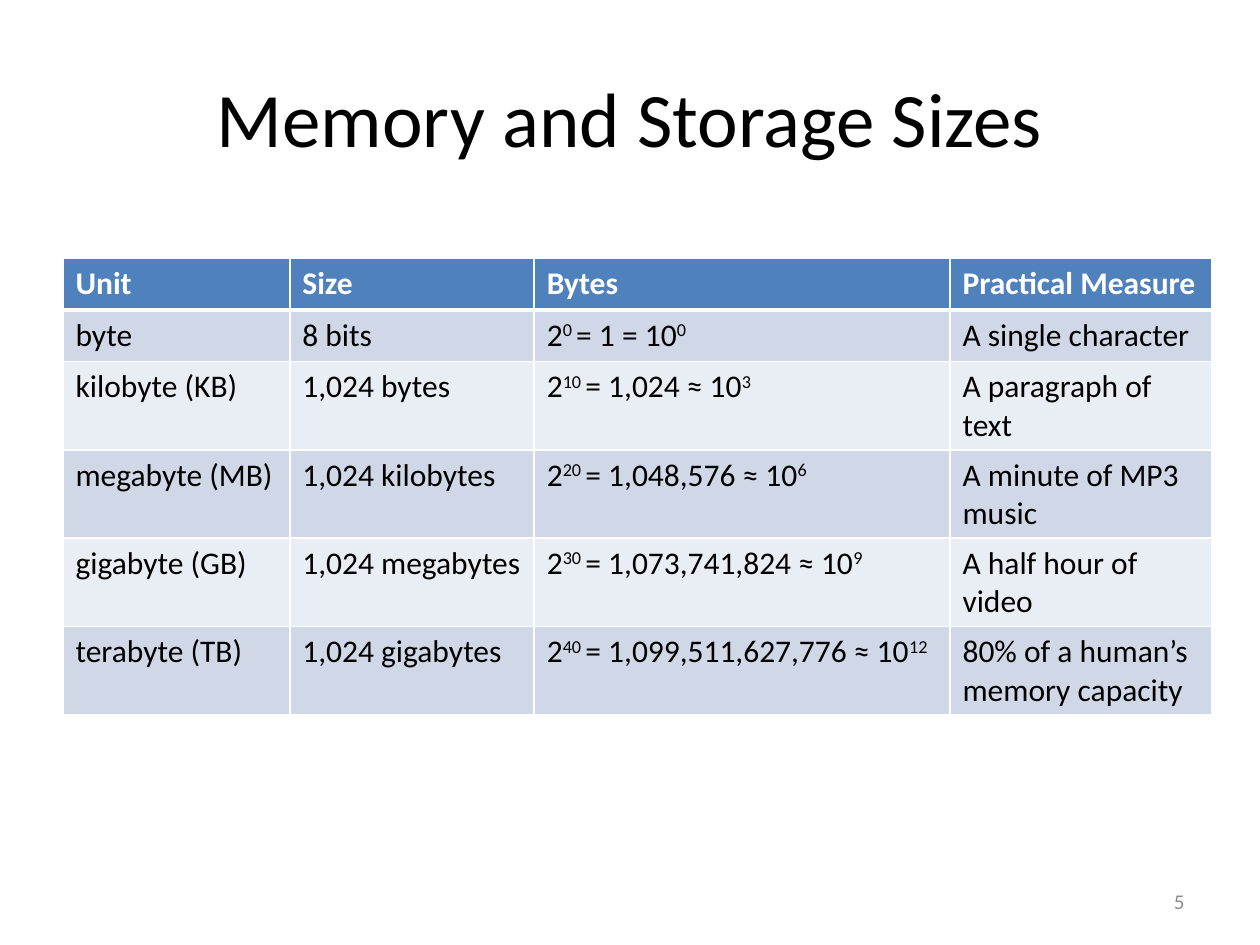
from lxml import etree
from pptx import Presentation
from pptx.dml.color import RGBColor
from pptx.enum.text import MSO_ANCHOR as Anchor, PP_ALIGN as Align
from pptx.oxml.ns import qn
from pptx.util import Inches, Pt

WHITE, BLACK, GRAY = "FFFFFF", "000000", "8C8C8C"
HEADER_FILL, BAND_FILLS = "4F81BD", ("D0D8E8", "E9EDF4")

COLUMN_WIDTHS = (1.8, 1.94, 3.3, 2.08)
ROW_HEIGHT = 0.41
HEADERS = ("Unit", "Size", "Bytes", "Practical Measure")
# Unit, size, power of two, byte count with sign, power of ten, measure
UNITS = (
    ("byte", "8 bits", "0", "1 =", "0", "A single character"),
    ("kilobyte (KB)", "1,024 bytes", "10", "1,024 ≈", "3", "A paragraph of text"),
    ("megabyte (MB)", "1,024 kilobytes", "20", "1,048,576 ≈", "6",
     "A minute of MP3 music"),
    ("gigabyte (GB)", "1,024 megabytes", "30", "1,073,741,824 ≈", "9",
     "A half hour of video"),
    ("terabyte (TB)", "1,024 gigabytes", "40", "1,099,511,627,776 ≈", "12",
     "80% of a human’s memory capacity"),
)


def color(value):
    return RGBColor.from_string(value)


def add_run(paragraph, text, size, text_color, bold=False, raised=False):
    run = paragraph.add_run()
    run.text = text
    formats = {"name": "Calibri", "size": Pt(size), "bold": bold}
    for name, value in formats.items():
        setattr(run.font, name, value)
    run.font.color.rgb = color(text_color)
    if raised:
        run._r.get_or_add_rPr().set("baseline", "30000")


def add_text(slide, box, text, size, text_color, alignment):
    shape = slide.shapes.add_textbox(*map(Inches, box))
    frame = shape.text_frame
    frame.word_wrap = True
    frame.vertical_anchor = Anchor.MIDDLE
    paragraph = frame.paragraphs[0]
    paragraph.alignment = alignment
    add_run(paragraph, text, size, text_color)


def set_borders(cell, widths):
    properties = cell._tc.get_or_add_tcPr()
    for side, width in widths.items():
        line = etree.SubElement(properties, qn(f"a:ln{side}"), w=str(Pt(width)))
        fill = etree.SubElement(line, qn("a:solidFill"))
        etree.SubElement(fill, qn("a:srgbClr"), val=WHITE)


def fill_cell(cell, parts, fill, text_color, bold, widths):
    """Parts alternate between normal and superscript text."""
    set_borders(cell, widths)
    cell.fill.solid()
    cell.fill.fore_color.rgb = color(fill)
    paragraph = cell.text_frame.paragraphs[0]
    for index, text in enumerate(parts):
        add_run(paragraph, text, 18, text_color, bold, raised=index % 2 == 1)


def add_size_table(slide, left, top):
    rows = [[(header,) for header in HEADERS]]
    for unit, size, two, count, ten, measure in UNITS:
        rows.append([(unit,), (size,), ("2", f"{two} ", f"= {count} 10", ten), (measure,)])
    table = slide.shapes.add_table(
        len(rows), len(COLUMN_WIDTHS), Inches(left), Inches(top),
        Inches(sum(COLUMN_WIDTHS)), Inches(ROW_HEIGHT * len(rows))).table
    for column, width in zip(table.columns, COLUMN_WIDTHS):
        column.width = Inches(width)
    for index, cells in enumerate(rows):
        table.rows[index].height = Inches(ROW_HEIGHT)
        header = index == 0
        fill = HEADER_FILL if header else BAND_FILLS[(index - 1) % 2]
        # A heavier rule separates the header from the body
        widths = {"L": 1, "R": 1, "T": 3 if index == 1 else 1, "B": 3 if header else 1}
        for cell, parts in zip(table.rows[index].cells, cells):
            fill_cell(cell, parts, fill, WHITE if header else BLACK, header, widths)


def main():
    presentation = Presentation()
    presentation.slide_width, presentation.slide_height = Inches(10), Inches(7.5)
    slide = presentation.slides.add_slide(presentation.slide_layouts[6])

    # Title
    add_text(slide, (0.5, 0.3, 9, 1.25), "Memory and Storage Sizes", 44, BLACK, Align.CENTER)
    # Table of units
    add_size_table(slide, 0.5, 2.05)
    # Slide number
    add_text(slide, (7.17, 6.95, 2.33, 0.4), "5", 12, GRAY, Align.RIGHT)

    presentation.save("out.pptx")


if __name__ == "__main__":
    main()
